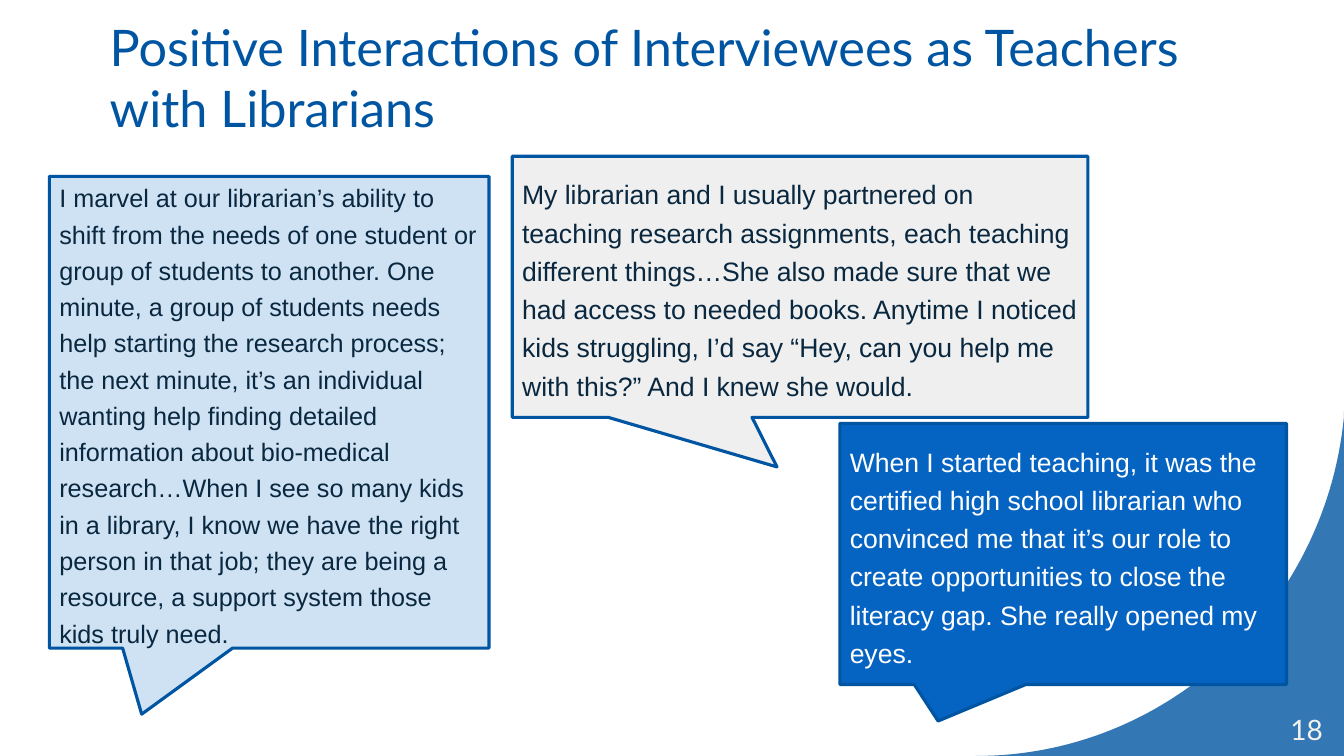
from lxml import etree
from pptx import Presentation
from pptx.dml.color import RGBColor
from pptx.enum.shapes import MSO_SHAPE
from pptx.enum.text import MSO_ANCHOR, PP_ALIGN
from pptx.oxml.ns import qn
from pptx.util import Inches, Pt

RECT_CALLOUT = MSO_SHAPE.RECTANGULAR_CALLOUT
ROUND_CALLOUT = MSO_SHAPE.ROUNDED_RECTANGULAR_CALLOUT
MIDDLE = MSO_ANCHOR.MIDDLE
LEFT, RIGHT = PP_ALIGN.LEFT, PP_ALIGN.RIGHT

NAVY = RGBColor(0x00, 0x55, 0xA2)
BLUE = RGBColor(0x05, 0x63, 0xC1)
PALE_BLUE = RGBColor(0xCF, 0xE2, 0xF3)
GRAY = RGBColor(0xEF, 0xEF, 0xEF)
INK = RGBColor(0x09, 0x28, 0x3F)
CREAM = RGBColor(0xF4, 0xF2, 0xEC)
WHITE = RGBColor(0xFF, 0xFF, 0xFF)

TITLE = "Positive Interactions of Interviewees as Teachers with Librarians"
PARTNER_QUOTE = (
    "My librarian and I usually partnered on teaching research assignments, "
    "each teaching different things…She also made sure that we had access to "
    "needed books. Anytime I noticed kids struggling, I’d say “Hey, can you "
    "help me with this?” And I knew she would."
)
ROLE_QUOTE = (
    "When I started teaching, it was the certified high school librarian who "
    "convinced me that it’s our role to create opportunities to close the "
    "literacy gap. She really opened my eyes."
)
MARVEL_QUOTE = (
    "I marvel at our librarian’s ability to shift from the needs of one "
    "student or group of students to another. One minute, a group of students "
    "needs help starting the research process; the next minute, it’s an "
    "individual wanting help finding detailed information about bio-medical "
    "research…When I see so many kids in a library, I know we have the right "
    "person in that job; they are being a resource, a support system those "
    "kids truly need."
)


def write_text(s, text, *, size, color, font="Lato", align=LEFT, margin=0.05,
               line_spacing=None, space_before=0):
    tf = s.text_frame
    tf.word_wrap = True
    tf.vertical_anchor = MIDDLE
    tf.margin_left = tf.margin_right = Inches(0.1)
    tf.margin_top = tf.margin_bottom = Inches(margin)
    p = tf.paragraphs[0]
    p.alignment = align
    p.line_spacing = line_spacing
    p.space_before = Pt(space_before)
    r = p.add_run()
    r.text = text
    r.font.name = font
    r.font.size = Pt(size)
    r.font.color.rgb = color


def add_label(slide, box, text, **text_format):
    s = slide.shapes.add_textbox(*map(Inches, box))
    write_text(s, text, **text_format)


def add_callout(slide, shape_type, box, adjustments, fill, text, size, color):
    """Draw a speech bubble; adjustments place its tip relative to its centre."""
    s = slide.shapes.add_shape(shape_type, *map(Inches, box))
    s.shadow.inherit = False
    for i, value in enumerate(adjustments):
        s.adjustments[i] = value
    s.fill.solid()
    s.fill.fore_color.rgb = fill
    s.line.color.rgb = NAVY
    s.line.width = Pt(2.25)
    write_text(s, text, size=size, color=color, font="Arial", margin=0.1,
               line_spacing=1.2, space_before=10)


def bezier_points(start, control1, control2, end, steps=60):
    for i in range(steps + 1):
        t = i / steps
        u = 1 - t
        weights = (u ** 3, 3 * u * u * t, 3 * u * t * t, t ** 3)
        yield tuple(
            Inches(sum(w * c for w, c in zip(weights, axis)))
            for axis in zip(start, control1, control2, end)
        )


def add_corner(slide):
    """Fill the bottom-right corner outside a large arc."""
    arc = list(bezier_points((9.68, 7.5), (11.58, 7.5), (13.15, 6.02), (13.33, 4.13)))
    builder = slide.shapes.build_freeform(*arc[0], scale=1.0)
    corner = [(Inches(13.33), Inches(4.08)), (Inches(13.33), Inches(7.5))]
    builder.add_line_segments(arc[1:] + corner, close=True)
    s = builder.convert_to_shape()
    s.shadow.inherit = False
    s.fill.solid()
    s.fill.fore_color.rgb = NAVY
    s.line.fill.background()
    color = s.fill._xPr.find(qn("a:solidFill"))[0]
    etree.SubElement(color, qn("a:alpha"), val="80000")


def main():
    prs = Presentation()
    prs.slide_width = Inches(13.33)
    prs.slide_height = Inches(7.5)
    slide = prs.slides.add_slide(prs.slide_layouts[6])

    add_corner(slide)
    add_label(slide, (0.99, 0.15, 10.84, 1.23), TITLE, size=36, color=NAVY)
    add_label(slide, (12.46, 7.04, 0.76, 0.4), "18", size=20, color=CREAM, align=RIGHT)
    add_callout(slide, RECT_CALLOUT, (5.08, 1.55, 5.71, 2.59), (-0.04, 0.69),
                GRAY, PARTNER_QUOTE, 19, INK)
    add_callout(slide, ROUND_CALLOUT, (8.33, 4.2, 4.43, 2.59), (-0.28, 0.64, 0),
                BLUE, ROLE_QUOTE, 19, WHITE)
    add_callout(slide, RECT_CALLOUT, (0.49, 1.75, 4.36, 4.68), (-0.29, 0.64),
                PALE_BLUE, MARVEL_QUOTE, 18, INK)
    prs.save("out.pptx")


if __name__ == "__main__":
    main()
